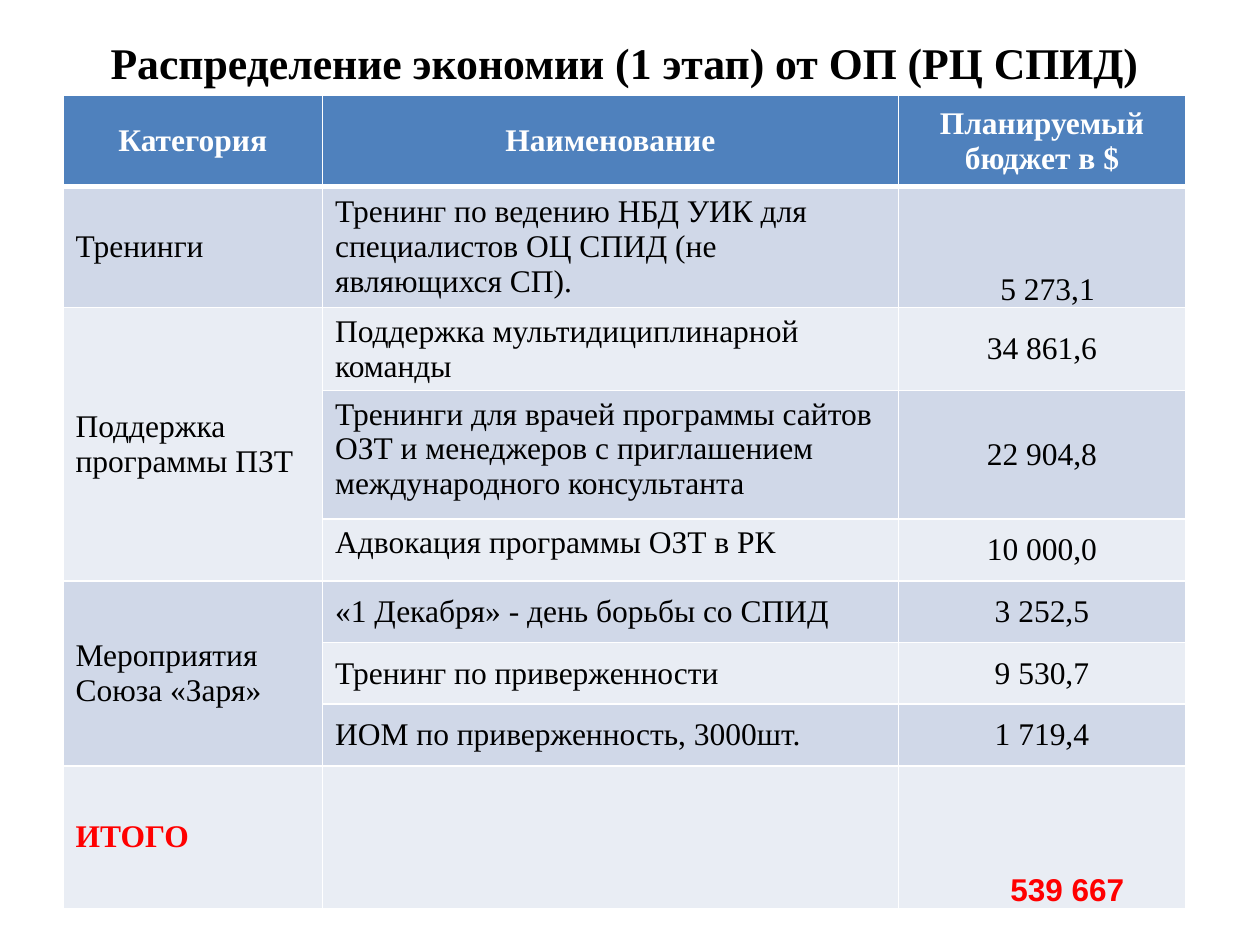
import dataclasses

import pptx
import pptx.dml.color
import pptx.enum.text
import pptx.oxml
import pptx.oxml.ns
import pptx.util

Inches = pptx.util.Inches
ALIGN = pptx.enum.text.PP_ALIGN
ANCHOR = pptx.enum.text.MSO_ANCHOR


@dataclasses.dataclass(frozen=True)
class Theme:
    """Colours, fonts and type sizes of the slide."""
    header: str = "4F81BD"
    bands: tuple = ("D0D8E8", "E9EDF4")
    white: str = "FFFFFF"
    ink: str = "000000"
    total: str = "FF0000"
    serif: str = "Times New Roman"
    sans: str = "Arial"
    title_size: int = 25
    body_size: int = 18
    thin: int = 1
    thick: int = 3


THEME = Theme()
TITLE = "Распределение экономии (1 этап) от ОП (РЦ СПИД)"
HEADERS = ("Категория", "Наименование", "Планируемый бюджет в $")
GROUPS = (
    ("Тренинги", (
        ("Тренинг по ведению НБД УИК для специалистов ОЦ СПИД (не являющихся СП).", "5 273,1"),
    )),
    ("Поддержка программы ПЗТ", (
        ("Поддержка мультидициплинарной команды", "34 861,6"),
        ("Тренинги для врачей программы сайтов ОЗТ и менеджеров с приглашением "
         "международного консультанта", "22 904,8"),
        ("Адвокация программы ОЗТ в РК", "10 000,0"),
    )),
    ("Мероприятия Союза «Заря»", (
        ("«1 Декабря» - день борьбы со СПИД", "3 252,5"),
        ("Тренинг по приверженности", "9 530,7"),
        ("ИОМ по приверженность, 3000шт.", "1 719,4"),
    )),
    ("ИТОГО", (("", "539 667"),)),
)
COLUMN_WIDTHS = (2.06, 4.57, 2.28)
ROW_HEIGHTS = (0.72, 0.95, 0.66, 1.02, 0.49, 0.49, 0.49, 0.49, 1.13)
TOP_ROWS = (3, 4)
NAME_MARGIN = 0.03
AMOUNT_INDENTS = {1: 0.81, 8: 0.89}


def write_text(frame, text, align=ALIGN.LEFT, color=THEME.ink, **font_values):
    """Write one formatted paragraph into a text frame."""
    para = frame.paragraphs[0]
    para.alignment = align
    span = para.add_run()
    span.text = text
    values = {"name": THEME.serif, "size": pptx.util.Pt(THEME.body_size), "bold": False}
    for name, value in {**values, **font_values}.items():
        setattr(span.font, name, value)
    span.font.color.rgb = pptx.dml.color.RGBColor.from_string(color)


def style_cell(cell, row, fill):
    """Fill a cell and draw its white borders."""
    cell.fill.solid()
    cell.fill.fore_color.rgb = pptx.dml.color.RGBColor.from_string(fill)
    widths = {"lnL": THEME.thin, "lnR": THEME.thin,
              "lnT": THEME.thick if row == 1 else THEME.thin,
              "lnB": THEME.thick if row == 0 else THEME.thin}
    for position, (side, width) in enumerate(widths.items()):
        border = pptx.oxml.parse_xml(
            f'<a:{side} {pptx.oxml.ns.nsdecls("a")} w="{pptx.util.Pt(width)}">'
            f'<a:solidFill><a:srgbClr val="{THEME.white}"/></a:solidFill></a:{side}>')
        cell._tc.get_or_add_tcPr().insert(position, border)


def add_title(page, left, top, width, height):
    """Place the centred slide title in the given box."""
    box = page.shapes.add_textbox(left, top, width, height)
    frame = box.text_frame
    frame.word_wrap = True
    frame.vertical_anchor = ANCHOR.MIDDLE
    write_text(frame, TITLE, ALIGN.CENTER, bold=True, size=pptx.util.Pt(THEME.title_size))


def write_name(cell, row, text):
    """Write an item name, at the cell's top or tightly in its middle."""
    if row in TOP_ROWS:
        cell.vertical_anchor = ANCHOR.TOP
    else:
        cell.margin_top = cell.margin_bottom = Inches(NAME_MARGIN)
    write_text(cell.text_frame, text)


def write_amount(cell, row, text, color, **font_values):
    """Write a budget figure, centred or indented at the cell's foot."""
    align = ALIGN.CENTER
    if row in AMOUNT_INDENTS:
        align = ALIGN.LEFT
        cell.vertical_anchor = ANCHOR.BOTTOM
        margins = {"margin_left": Inches(AMOUNT_INDENTS[row]), "margin_right": 0,
                   "margin_top": 0, "margin_bottom": 0}
        for name, value in margins.items():
            setattr(cell, name, value)
    write_text(cell.text_frame, text, align, color, **font_values)


def add_budget_table(page, left, top, width, height):
    """Place the budget table in the given box."""
    table = page.shapes.add_table(
        len(ROW_HEIGHTS), len(COLUMN_WIDTHS), left, top, width, height).table
    for column, share in zip(table.columns, COLUMN_WIDTHS):
        column.width = int(width * share / sum(COLUMN_WIDTHS))
    for line, share in zip(table.rows, ROW_HEIGHTS):
        line.height = int(height * share / sum(ROW_HEIGHTS))
    for row in range(len(ROW_HEIGHTS)):
        for column in range(len(COLUMN_WIDTHS)):
            cell = table.cell(row, column)
            style_cell(cell, row, THEME.bands[(row - 1) % 2] if row else THEME.header)
            cell.vertical_anchor = ANCHOR.MIDDLE
    for column, text in enumerate(HEADERS):
        write_text(table.cell(0, column).text_frame, text, ALIGN.CENTER, THEME.white, bold=True)
    row = 1
    for category, items in GROUPS:
        is_total = row == len(ROW_HEIGHTS) - 1
        color = THEME.total if is_total else THEME.ink
        first = table.cell(row, 0)
        if len(items) > 1:
            first.merge(table.cell(row + len(items) - 1, 0))
        write_text(first.text_frame, category, color=color, bold=is_total)
        for name, amount in items:
            if name:
                write_name(table.cell(row, 1), row, name)
            write_amount(table.cell(row, 2), row, amount, color, bold=is_total,
                         name=THEME.sans if is_total else THEME.serif)
            row += 1


def main():
    """Build and save the deck."""
    deck = pptx.Presentation()
    deck.slide_width, deck.slide_height = Inches(10), Inches(7.5)
    page = deck.slides.add_slide(deck.slide_layouts[6])
    add_title(page, Inches(0.5), Inches(0.3), Inches(8.91), Inches(0.38))
    add_budget_table(page, Inches(0.5), Inches(0.76),
                     Inches(sum(COLUMN_WIDTHS)), Inches(sum(ROW_HEIGHTS)))
    deck.save("out.pptx")


if __name__ == "__main__":
    main()
